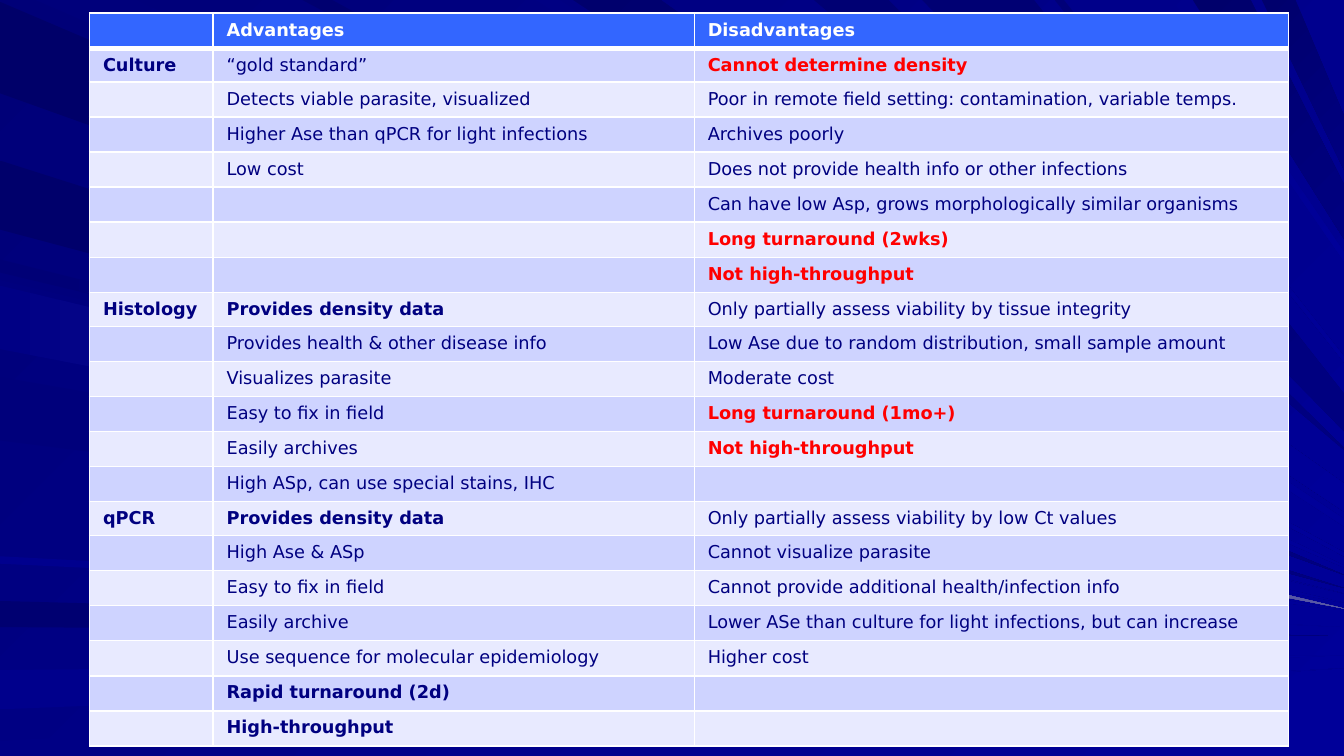
from lxml.etree import SubElement
from pptx import Presentation
from pptx.dml.color import RGBColor
from pptx.oxml.ns import qn
from pptx.util import Pt

FONT, SIZE = "DejaVu Sans", 9.5
NAVY, ROYAL, RED, WHITE, BLUE = "000080", "000099", "FF0000", "FFFFFF", "3366FF"
BANDS = ["CED3FF", "E8EAFF"]
W, H = 720, 405

# Table content: a leading * marks a bold point, a leading ! a red drawback
HEADER = ["", "Advantages", "Disadvantages"]
METHODS = [
    ("Culture",
     ["“gold standard”", "Detects viable parasite, visualized",
      "Higher Ase than qPCR for light infections", "Low cost", "", "", ""],
     ["!Cannot determine density",
      "Poor in remote field setting: contamination, variable temps.",
      "Archives poorly", "Does not provide health info or other infections",
      "Can have low Asp, grows morphologically similar organisms",
      "!Long turnaround (2wks)", "!Not high-throughput"]),
    ("Histology",
     ["*Provides density data", "Provides health & other disease info",
      "Visualizes parasite", "Easy to fix in field", "Easily archives",
      "High ASp, can use special stains, IHC"],
     ["Only partially assess viability by tissue integrity",
      "Low Ase due to random distribution, small sample amount",
      "Moderate cost", "!Long turnaround (1mo+)", "!Not high-throughput", ""]),
    ("qPCR",
     ["*Provides density data", "High Ase & ASp", "Easy to fix in field",
      "Easily archive", "Use sequence for molecular epidemiology",
      "*Rapid turnaround (2d)", "*High-throughput"],
     ["Only partially assess viability by low Ct values",
      "Cannot visualize parasite",
      "Cannot provide additional health/infection info",
      "Lower ASe than culture for light infections, but can increase",
      "Higher cost", "", ""]),
]
LEFT, TOP, ROW_H = 48, 7, 18.26
COL_W = [66.24, 257.76, 318.24]

# Rays from the left edge: top, bottom, tip on the right edge, colours
LEFT_RAYS = [
    (1, 50, 308, "000069", NAVY),
    (322, 336, 341, "000071", NAVY),
    (359, 380, 351, "00008C", ROYAL),
    (397, 405, 358, "000085", ROYAL),
    (139, 146, 318, "000076", ROYAL),
    (86, 123, 315, "00006B", NAVY),
    (150, 185, 323, "00007E", ROYAL),
    (202, 236, 327, "00007B", ROYAL),
    (298, 302, 336, "00008E", ROYAL),
    (153, 187, 326, "000085", "5A5AA6"),
]
# Rays from the top edge: left, right, upper and lower end on the right edge
TOP_RAYS = [
    (19, 73, 303, 304, "00007B", ROYAL),
    (162, 178, 296, 298, "000070", ROYAL),
    (287, 300, 278, 282, "000083", ROYAL),
    (307, 354, 259, 274, "00006D", ROYAL),
    (436, 476, 240, 241, "000073", NAVY),
    (494, 554, 211, 231, "000073", NAVY),
    (565, 570, 191, 194, "000078", ROYAL),
    (623, 628, 135, 140, "00008A", ROYAL),
    (639, 670, 99, 128, "00006B", NAVY),
    (676, 694, 62, 91, "00006D", NAVY),
]


def rgb(value):
    return RGBColor.from_string(value)


def paint(fill, first, last, angle):
    fill.gradient()
    fill.gradient_angle = 360 - angle
    for stop, color in zip(fill.gradient_stops, (first, last)):
        stop.color.rgb = rgb(color)


def draw_ray(slide, corners, first, last, angle):
    start, *rest = [(Pt(x), Pt(y)) for x, y in corners]
    builder = slide.shapes.build_freeform(*start)
    builder.add_line_segments(rest, close=True)
    sp = builder.convert_to_shape()
    sp.shadow.inherit = False
    sp.line.fill.background()
    paint(sp.fill, first, last, angle)


def write(tf, text, color=NAVY, bold=False):
    p = tf.paragraphs[0]
    if not text:  # keeps an empty row as low as the others
        SubElement(p._p, qn("a:endParaRPr"), sz=str(int(SIZE * 100)))
        return
    r = p.add_run()
    r.text = text
    r.font.name, r.font.size, r.font.bold = FONT, Pt(SIZE), bold
    r.font.color.rgb = rgb(color)


def style_cell(cell, fill, top=1, bottom=1):
    tc_pr = cell._tc.get_or_add_tcPr()
    for side, width in zip("LRTB", (1, 1, top, bottom)):
        ln = SubElement(tc_pr, qn("a:ln" + side), w=str(Pt(width)))
        SubElement(SubElement(ln, qn("a:solidFill")), qn("a:srgbClr"), val=WHITE)
    cell.fill.solid()
    cell.fill.fore_color.rgb = rgb(fill)


def main():
    prs = Presentation()
    prs.slide_width, prs.slide_height = Pt(W), Pt(H)
    slide = prs.slides.add_slide(prs.slide_layouts[6])

    # Background
    paint(slide.background.fill, "000078", ROYAL, 45)
    for top, bottom, tip, first, last in LEFT_RAYS:
        draw_ray(slide, [(0, top), (W, tip), (0, bottom)], first, last, 0)
    for left, right, upper, lower, first, last in TOP_RAYS:
        corners = [(left, 0), (right, 0), (W, upper), (W, lower)]
        draw_ray(slide, corners, first, last, 45)

    # Comparison table
    rows = [HEADER]
    for name, pros, cons in METHODS:
        for i, pair in enumerate(zip(pros, cons)):
            rows.append(["" if i else name, *pair])
    table = slide.shapes.add_table(len(rows), len(COL_W), Pt(LEFT), Pt(TOP),
                                   Pt(sum(COL_W)), Pt(ROW_H * len(rows))).table
    table.first_row = table.horz_banding = False
    for col, width in zip(table.columns, COL_W):
        col.width = Pt(width)
    for i, row in enumerate(rows):
        table.rows[i].height = Pt(ROW_H)
        for j, text in enumerate(row):
            cell = table.cell(i, j)
            style_cell(cell, BANDS[(i - 1) % 2] if i else BLUE,
                       top=3 if i == 1 else 1, bottom=1 if i else 3)
            color = WHITE if i == 0 else RED if text.startswith("!") else NAVY
            bold = i == 0 or j == 0 or text.startswith(("*", "!"))
            write(cell.text_frame, text.lstrip("*!"), color=color, bold=bold)

    prs.save("out.pptx")


if __name__ == "__main__":
    main()
